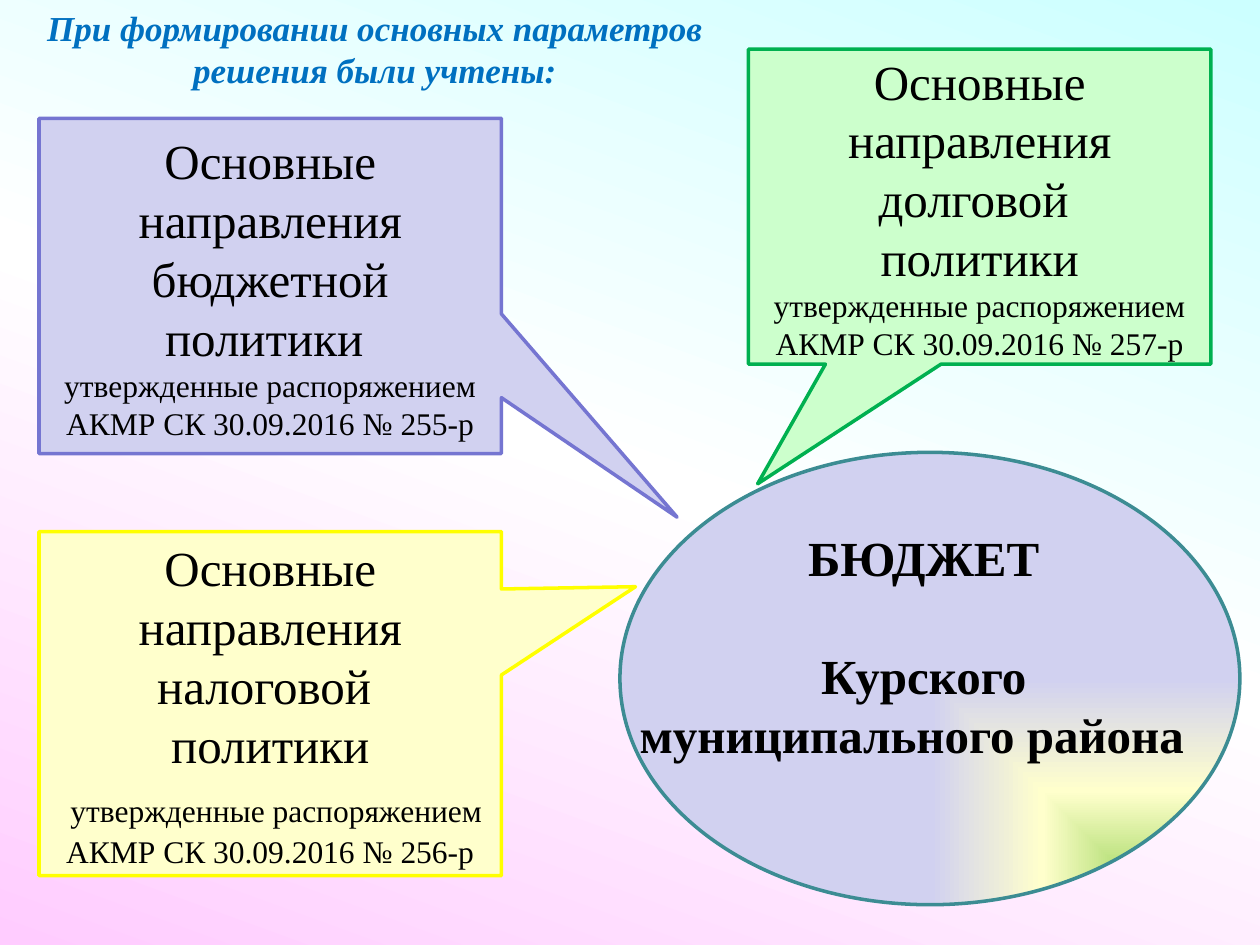
"""Build the slide on the policies behind the district budget."""
from dataclasses import dataclass

from pptx import Presentation, oxml, util as u
from pptx.dml import color
from pptx.enum import shapes, text
from pptx.oxml import ns


@dataclass(frozen=True)
class Theme:
    font: str = "Times New Roman"
    ink: str = "000000"
    title: str = "0070C0"
    rim: str = "3C8C93"
    sky: tuple = ("CCFFFF", "FFFFFF", "FFCCFF")
    oval: tuple = ("92D050", "FFFFCC", "D1D1F0")
    big: int = 28
    mid: int = 20
    small: int = 18
    line: int = 2


@dataclass(frozen=True)
class Run:
    text: str
    size: int
    hue: str = Theme.ink
    bold: bool = False
    slant: bool = False


@dataclass(frozen=True)
class Para:
    runs: tuple[Run, ...]
    before: float = 0
    left: float = 0


@dataclass(frozen=True)
class Call:
    box: tuple[float, float, float, float]
    tip: tuple[float, float]
    fill: str
    line: str
    paras: tuple[Para, ...]


T = Theme()
LINEAR = '<a:lin ang="6600000" scaled="0"/>'
CORNER = '<a:path path="rect"><a:fillToRect l="100000" t="100000"/></a:path>'


def rgb(hue: str) -> color.RGBColor:
    return color.RGBColor.from_string(hue)


def shade(owner, fill, hues: tuple, way: str) -> None:
    """Fill with three even gradient stops running the given way."""
    fill.gradient()
    old = next(owner.iter(ns.qn("a:gradFill")))
    stops = "".join(
        f'<a:gs pos="{i * 50000}"><a:srgbClr val="{hue}"/></a:gs>'
        for i, hue in enumerate(hues))
    new = oxml.parse_xml(
        f'<a:gradFill {ns.nsdecls("a")} rotWithShape="1">'
        f'<a:gsLst>{stops}</a:gsLst>{way}</a:gradFill>')
    old.getparent().replace(old, new)


def write(frame, paras: tuple[Para, ...]) -> None:
    """Write centred paragraphs run by run."""
    frame.word_wrap = True
    for i, item in enumerate(paras):
        para = frame.add_paragraph() if i else frame.paragraphs[0]
        para.alignment = text.PP_ALIGN.CENTER
        para.space_before = u.Pt(item.before)
        if item.left:
            para._p.get_or_add_pPr().set("marL", str(u.Inches(item.left)))
        for part in item.runs:
            run = para.add_run()
            run.text = part.text
            font = run.font
            font.name, font.size = T.font, u.Pt(part.size)
            font.bold, font.italic = part.bold, part.slant
            font.color.rgb = rgb(part.hue)


def shape(slide, kind, box: tuple, line: str):
    """Add a flat outlined shape."""
    item = slide.shapes.add_shape(kind, *map(u.Inches, box))
    item.shadow.inherit = False
    item.line.color.rgb = rgb(line)
    item.line.width = u.Pt(T.line)
    return item


def callout(slide, call: Call) -> None:
    """Draw a callout whose tip points at the oval."""
    item = shape(slide, shapes.MSO_SHAPE.RECTANGULAR_CALLOUT,
                 call.box, call.line)
    item.adjustments[0], item.adjustments[1] = call.tip
    item.fill.solid()
    item.fill.fore_color.rgb = rgb(call.fill)
    item.text_frame.vertical_anchor = text.MSO_ANCHOR.MIDDLE
    write(item.text_frame, call.paras)


def label(slide, box: tuple, paras: tuple[Para, ...], right: float = 0.1) -> None:
    """Add a free text box."""
    frame = slide.shapes.add_textbox(*map(u.Inches, box)).text_frame
    frame.margin_right = u.Inches(right)
    write(frame, paras)


def big(words: str) -> Para:
    return Para((Run(words, T.big),))


def order(num: int) -> Run:
    return Run(f"утвержденные распоряжением АКМР СК 30.09.2016 № {num}-р", T.small)


def bold(words: str, before: float = 0, left: float = 0) -> Para:
    return Para((Run(words, T.big, bold=True),), before, left)


def head(words: str) -> Para:
    return Para((Run(words, T.mid, T.title, True, True),))


CALLS = (
    Call((0.31, 0.94, 3.67, 2.66), (0.88, 0.69), "D1D1F0", "7575D1",
         (big("Основные направления бюджетной политики "),
          Para((order(255),)))),
    Call((5.94, 0.39, 3.67, 2.5), (-0.48, 0.88), "CCFFCC", "00B050",
         (big("Основные направления долговой "), big("политики"),
          Para((order(257),)))),
    Call((0.31, 4.22, 3.67, 2.73), (0.79, -0.34), "FFFFCC", "FFFF00",
         (big("Основные направления налоговой "), big("политики"),
          Para((Run(" ", T.big), order(256))))),
)


def main() -> None:
    deck = Presentation()
    deck.slide_width, deck.slide_height = u.Inches(10), u.Inches(7.5)
    slide = deck.slides.add_slide(deck.slide_layouts[6])
    shade(slide.element, slide.background.fill, T.sky, LINEAR)
    oval = shape(slide, shapes.MSO_SHAPE.OVAL, (4.92, 3.59, 4.92, 3.59), T.rim)
    shade(oval.element, oval.fill, T.oval, CORNER)
    for call in CALLS:
        callout(slide, call)
    label(slide, (4.92, 4.14, 4.92, 1.99),
          (bold("БЮДЖЕТ ", left=0.19), bold("Курского ", 33.6, 0.19),
           bold("муниципального района ")), 0.29)
    label(slide, (0, 0, 6.02, 0.77),
          (head("При формировании основных параметров "),
           head("решения были учтены: ")))
    deck.save("out.pptx")


if __name__ == "__main__":
    main()
